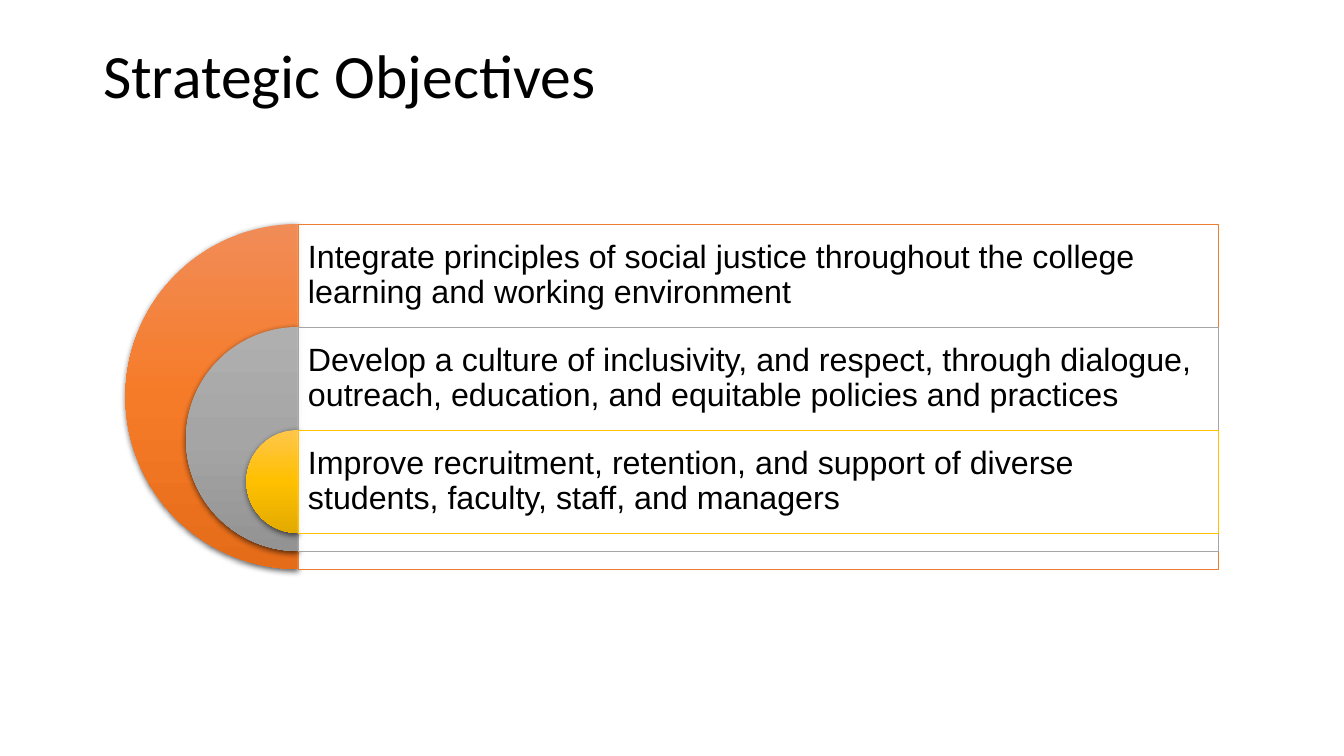
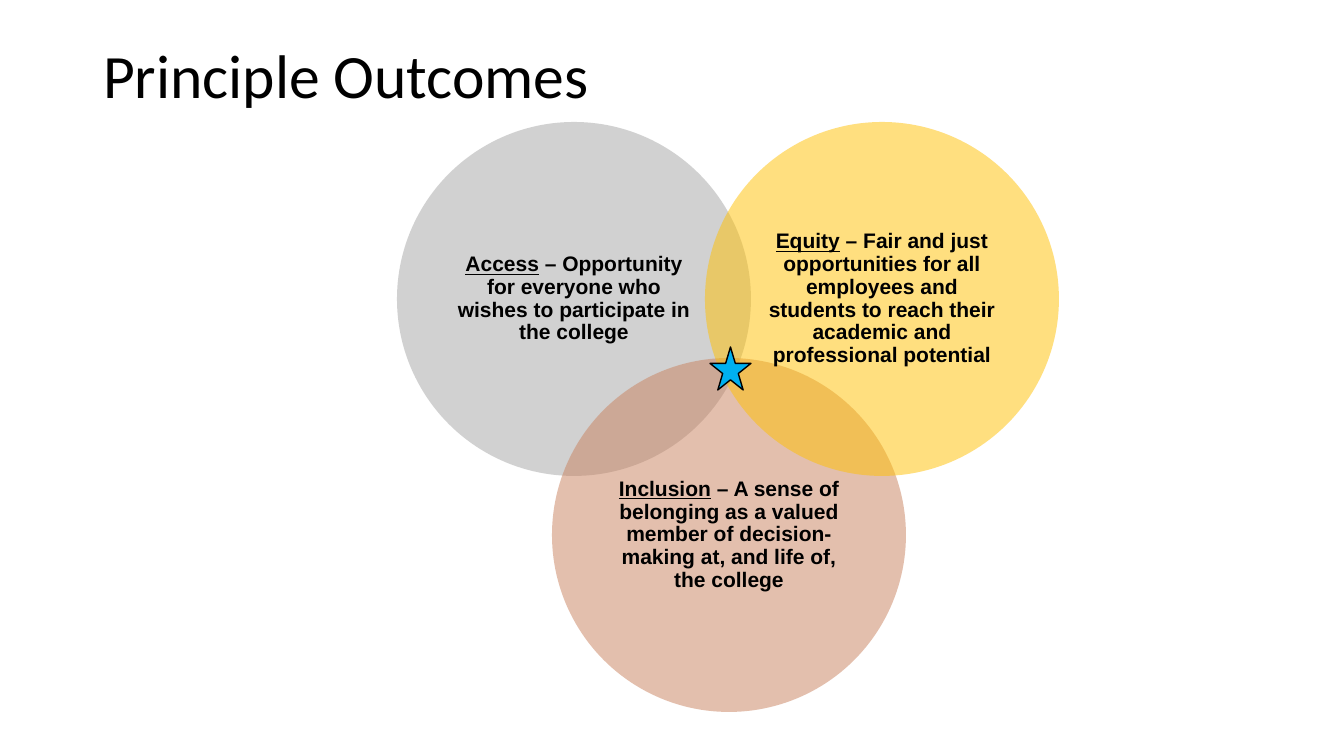
from copy import deepcopy
from dataclasses import dataclass

from lxml import etree
from pptx import Presentation
from pptx.dml.color import RGBColor
from pptx.enum.shapes import MSO_SHAPE
from pptx.enum.text import MSO_ANCHOR, MSO_AUTO_SIZE, PP_ALIGN
from pptx.oxml.ns import qn
from pptx.util import Emu, Pt

RECTANGLE, ELLIPSE = MSO_SHAPE.RECTANGLE, MSO_SHAPE.OVAL
PIE, STAR = MSO_SHAPE.PIE, MSO_SHAPE.STAR_5_POINT
TOP, MIDDLE = MSO_ANCHOR.TOP, MSO_ANCHOR.MIDDLE
LEFT, CENTER = PP_ALIGN.LEFT, PP_ALIGN.CENTER
NO_AUTOFIT = MSO_AUTO_SIZE.NONE

EMU_PER_PX = 914400 / 100.8
SLIDE_SIZE = 1344, 756
TITLE_ONLY = 5


@dataclass(frozen=True)
class Theme:
    text: str = "000000"
    panel: str = "FFFFFF"
    orange: str = "ED7D31"
    gray: str = "A5A5A5"
    gold: str = "FFC000"
    clay: str = "C9815D"
    blue: str = "00B0F0"
    orange_fade: tuple = ("F18C57", "F67B28", "E56C19")
    gray_fade: tuple = ("AFAFAF", "A5A5A5", "939393")
    gold_fade: tuple = ("FFC64B", "FFC000", "E3AB00")
    title_font: str = "Calibri"
    body_font: str = "Arial"
    title_size: int = 44
    objective_size: int = 23
    outcome_size: int = 15
    line_spacing: float = 0.9


THEME = Theme()


def px(*lengths):
    """Turn pixel lengths into EMU."""
    return [Emu(round(length * EMU_PER_PX)) for length in lengths]


class SlideBuilder:
    def __init__(self, deck, theme):
        self.deck = deck
        self.theme = theme
        self.slide = None

    def start_slide(self, title):
        self.slide = self.deck.slides.add_slide(self.deck.slide_layouts[TITLE_ONLY])
        box = self.slide.shapes.title
        box.left, box.top, box.width, box.height = px(93, 40, 1159, 146)
        frame = box.text_frame
        frame.auto_size = NO_AUTOFIT
        frame.vertical_anchor = TOP
        self.set_text(frame.paragraphs[0], [title], self.theme.title_font,
                      self.theme.title_size, LEFT)

    def set_text(self, para, texts, font_name, size, alignment, bold=False):
        """Fill and format a paragraph; return its runs."""
        para.alignment = alignment
        para.line_spacing = self.theme.line_spacing
        font = para.font
        font.name, font.size, font.bold = font_name, Pt(size), bold
        font.color.rgb = RGBColor.from_string(self.theme.text)
        for text in texts:
            para.add_run().text = text
        return para.runs

    def shape(self, preset, bounds, fill=None, opacity=100, line=None, line_width=1):
        shape = self.slide.shapes.add_shape(preset, *px(*bounds))
        shape.shadow.inherit = False
        if fill:
            shape.fill.solid()
            shape.fill.fore_color.rgb = RGBColor.from_string(fill)
            if opacity < 100:
                color = shape.element.spPr.find(qn("a:solidFill"))[0]
                etree.SubElement(color, qn("a:alpha"), val=str(opacity * 1000))
        if line:
            shape.line.color.rgb = RGBColor.from_string(line)
            shape.line.width = Pt(line_width)
        else:
            shape.line.fill.background()
        return shape

    def half_disc(self, bounds, fade):
        """Draw the left half of a disc with a vertical fade and a soft shadow."""
        disc = self.shape(PIE, bounds)
        disc.adjustments[0], disc.adjustments[1] = 54, 162
        disc.fill.gradient()
        disc.fill.gradient_angle = 270
        properties = disc.element.spPr
        stop_list = properties.find(qn("a:gradFill")).find(qn("a:gsLst"))
        stop_list.insert(1, deepcopy(stop_list[0]))
        for stop, position, color in zip(disc.fill.gradient_stops, (0, 0.5, 1), fade):
            stop.position = position
            stop.color.rgb = RGBColor.from_string(color)
        shadow = etree.SubElement(
            properties.find(qn("a:effectLst")), qn("a:outerShdw"),
            blurRad=str(int(Pt(4.5))), dist=str(int(Pt(1.5))), dir="5400000",
            algn="ctr", rotWithShape="0")
        color = etree.SubElement(shadow, qn("a:srgbClr"), val=self.theme.text)
        etree.SubElement(color, qn("a:alpha"), val="63000")

    def prepare_frame(self, frame, inset):
        """Wrap and centre the text vertically; return the first paragraph."""
        frame.word_wrap = True
        frame.vertical_anchor = MIDDLE
        (frame.margin_left, frame.margin_top,
         frame.margin_right, frame.margin_bottom) = px(*[inset] * 4)
        return frame.paragraphs[0]

    def text_box(self, bounds, text):
        box = self.slide.shapes.add_textbox(*px(*bounds))
        para = self.prepare_frame(box.text_frame, 10)
        self.set_text(para, [text], self.theme.body_font,
                      self.theme.objective_size, LEFT)

    def venn_circle(self, left, top, diameter, color, term, meaning):
        circle = self.shape(ELLIPSE, (left, top, diameter, diameter), color, opacity=50)
        para = self.prepare_frame(circle.text_frame, 6)
        spans = self.set_text(para, [term, f" – {meaning}"], self.theme.body_font,
                              self.theme.outcome_size, CENTER, bold=True)
        spans[0].font.underline = True


def add_objectives(builder):
    theme = builder.theme
    objectives = [
        ("Integrate principles of social justice throughout the college "
         "learning and working environment", theme.orange, theme.orange_fade),
        ("Develop a culture of inclusivity, and respect, through dialogue, "
         "outreach, education, and equitable policies and practices",
         theme.gray, theme.gray_fade),
        ("Improve recruitment, retention, and support of diverse "
         "students, faculty, staff, and managers", theme.gold, theme.gold_fade),
    ]
    center_x, first_top, row_height, panel_width = 298, 224, 103, 920
    largest, shrink = 345, 121

    builder.start_slide("Strategic Objectives")
    for index, (text, color, fade) in enumerate(objectives):
        top = first_top + index * row_height
        diameter = largest - index * shrink
        builder.half_disc((center_x - diameter / 2, top, diameter, diameter), fade)
        builder.shape(RECTANGLE, (center_x, top, panel_width, diameter), theme.panel,
                      opacity=90, line=color, line_width=0.5)
        builder.text_box((center_x, top, panel_width, row_height), text)


def add_outcomes(builder):
    theme = builder.theme
    outcomes = [
        (397, 122, theme.gray, "Access",
         "Opportunity for everyone who wishes to participate in the college"),
        (552, 358, theme.clay, "Inclusion",
         "A sense of belonging as a valued member of decision-making at, "
         "and life of, the college"),
        (705, 122, theme.gold, "Equity",
         "Fair and just opportunities for all employees and students to reach "
         "their academic and professional potential"),
    ]
    builder.start_slide("Principle Outcomes")
    for left, top, color, term, meaning in outcomes:
        builder.venn_circle(left, top, 354, color, term, meaning)
    builder.shape(STAR, (710, 347, 41, 43), theme.blue, line=theme.text)


def main():
    deck = Presentation()
    deck.slide_width, deck.slide_height = px(*SLIDE_SIZE)
    builder = SlideBuilder(deck, THEME)
    add_objectives(builder)
    add_outcomes(builder)
    deck.save("out.pptx")


if __name__ == "__main__":
    main()
